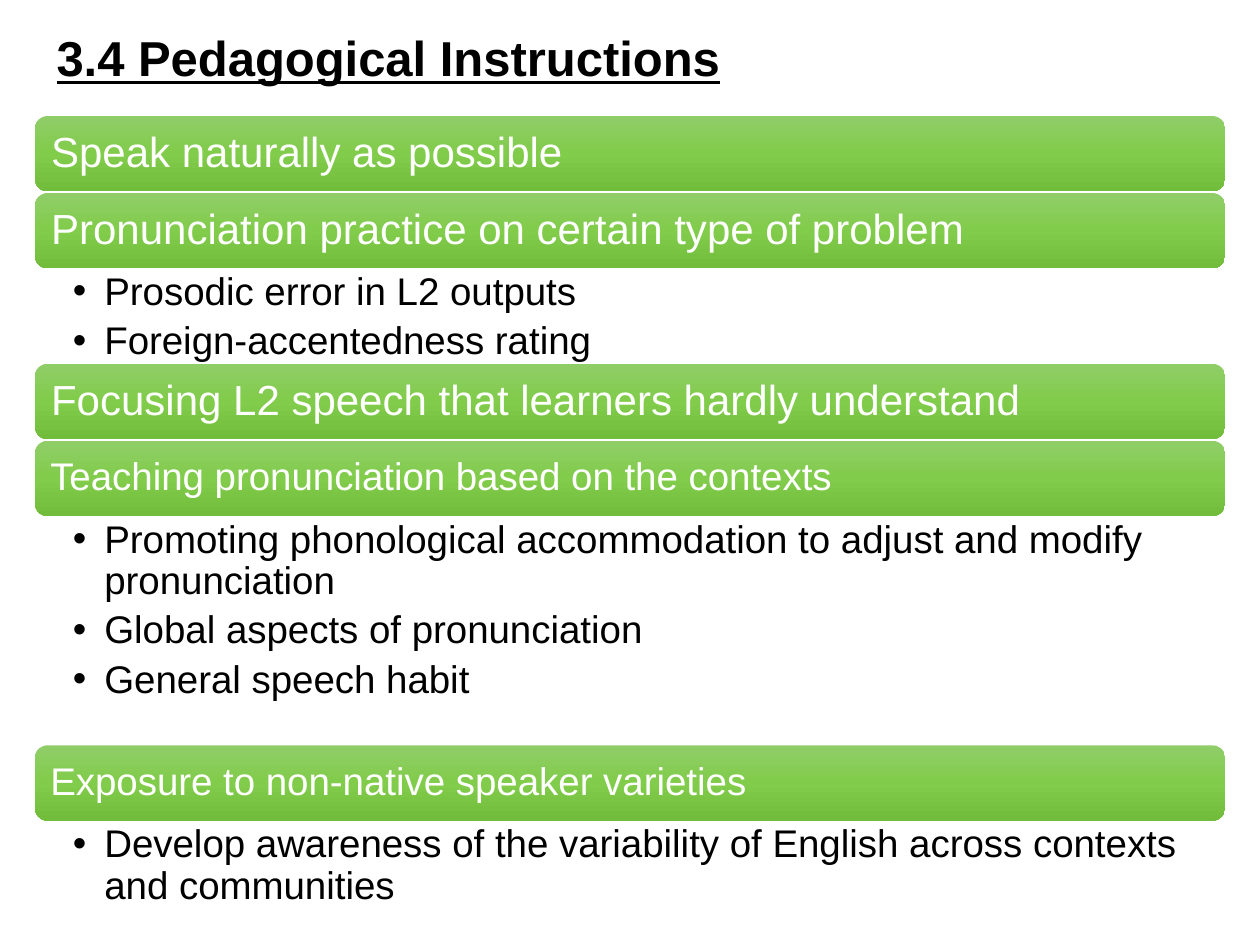
from dataclasses import dataclass

from lxml import etree
from pptx import Presentation
from pptx.dml.color import RGBColor
from pptx.enum import shapes, text
from pptx.oxml.ns import qn
from pptx.util import Pt

COLOURS = {
    "light": "90CD69",
    "middle": "81CC4A",
    "dark": "72BC3B",
    "white": "FFFFFF",
    "black": "000000",
}
LEFT, WIDTH = 20, 680
FIRST_TOP, BAR_HEIGHT, GAP = 66.3, 43, 1
BULLET_INDENT = 18


@dataclass
class Instruction:
    heading: str
    size: int = 24
    inset: float = 7.2
    points: tuple[str, ...] = ()
    points_height: float = GAP


INSTRUCTIONS = [
    Instruction("Speak naturally as possible"),
    Instruction(
        "Pronunciation practice on certain type of problem",
        points=("Prosodic error in L2 outputs", "Foreign-accentedness rating"),
        points_height=54.6,
    ),
    Instruction("Focusing L2 speech that learners hardly understand"),
    Instruction(
        "Teaching pronunciation based on the contexts", 22, 6.6,
        points=(
            "Promoting phonological accommodation to adjust and modify pronunciation",
            "Global aspects of pronunciation",
            "General speech habit",
        ),
        points_height=131,
    ),
    Instruction(
        "Exposure to non-native speaker varieties", 22, 6.6,
        points=("Develop awareness of the variability of English across contexts and communities",),
        points_height=50,
    ),
]


def set_frame(frame, anchor, left: float, top: float, right: float, bottom: float) -> None:
    frame.word_wrap = True
    frame.vertical_anchor = anchor
    frame.margin_left, frame.margin_top = Pt(left), Pt(top)
    frame.margin_right, frame.margin_bottom = Pt(right), Pt(bottom)


def style_para(para, size: int, colour: str) -> None:
    para.alignment = text.PP_ALIGN.LEFT
    para.line_spacing = 0.9
    for span in para.runs:
        span.font.name = "Arial"
        span.font.size = Pt(size)
        span.font.color.rgb = RGBColor.from_string(COLOURS[colour])


def fill_gradient(bar) -> None:
    bar.fill.gradient()
    bar.fill.gradient_angle = 270
    stops = bar.fill._fill._gradFill.find(qn("a:gsLst"))
    for stop in list(stops):
        stops.remove(stop)
    for position, name in ((0, "light"), (50, "middle"), (100, "dark")):
        stop = etree.SubElement(stops, qn("a:gs"), pos=str(position * 1000))
        etree.SubElement(stop, qn("a:srgbClr"), val=COLOURS[name])


def add_title(page, wording: str) -> None:
    box = page.shapes.add_textbox(Pt(25.2), Pt(15.1), Pt(644.4), Pt(39.6))
    set_frame(box.text_frame, text.MSO_ANCHOR.MIDDLE, 7.2, 3.6, 7.2, 3.6)
    para = box.text_frame.paragraphs[0]
    para.text = wording
    style_para(para, 28, "black")
    para.runs[0].font.bold = True
    para.runs[0].font.underline = True


def add_bar(page, item: Instruction, top: float) -> None:
    bar = page.shapes.add_shape(
        shapes.MSO_SHAPE.ROUNDED_RECTANGLE, Pt(LEFT), Pt(top), Pt(WIDTH), Pt(BAR_HEIGHT)
    )
    bar.shadow.inherit = False
    bar.line.fill.background()
    fill_gradient(bar)
    set_frame(bar.text_frame, text.MSO_ANCHOR.MIDDLE, *[item.inset] * 4)
    bar.text_frame.text = item.heading
    style_para(bar.text_frame.paragraphs[0], item.size, "white")


def add_points(page, item: Instruction, top: float) -> None:
    box = page.shapes.add_textbox(Pt(LEFT), Pt(top), Pt(WIDTH), Pt(item.points_height))
    set_frame(box.text_frame, text.MSO_ANCHOR.TOP, 21.6, 2.2, 12.2, 2.2)
    box.text_frame.text = "\n".join(item.points)
    for para in box.text_frame.paragraphs:
        style_para(para, 22, "black")
        para.space_after = Pt(4.4)
        para.level = 1
        properties = para._p.get_or_add_pPr()
        properties.set("marL", str(Pt(BULLET_INDENT)))
        properties.set("indent", str(-Pt(BULLET_INDENT)))
        etree.SubElement(properties, qn("a:buFont"), typeface="Arial")
        etree.SubElement(properties, qn("a:buChar"), char="•")


def main() -> None:
    """Build the slide of teaching instructions and save it."""
    deck = Presentation()
    deck.slide_width, deck.slide_height = Pt(720), Pt(540)
    page = deck.slides.add_slide(deck.slide_layouts[6])
    add_title(page, "3.4 Pedagogical Instructions")
    top = FIRST_TOP
    for item in INSTRUCTIONS:
        add_bar(page, item, top)
        top += BAR_HEIGHT
        if item.points:
            add_points(page, item, top)
        top += item.points_height
    deck.save("out.pptx")


if __name__ == "__main__":
    main()
